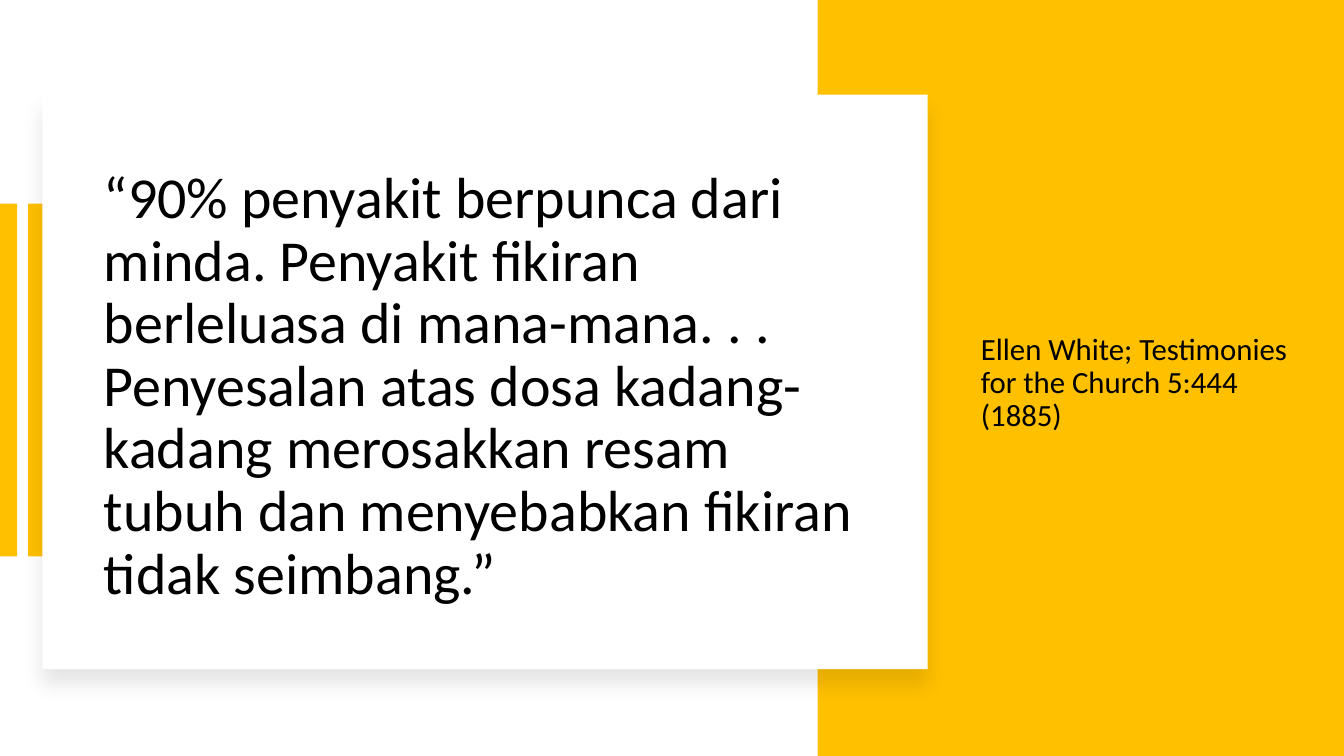
from dataclasses import dataclass

from lxml.etree import SubElement
from pptx import Presentation
from pptx.dml.color import RGBColor
from pptx.enum.shapes import MSO_SHAPE
from pptx.enum.text import MSO_ANCHOR, MSO_AUTO_SIZE, PP_ALIGN
from pptx.oxml.ns import qn
from pptx.shapes.autoshape import Shape
from pptx.slide import Slide
from pptx.util import Inches, Pt

AMBER = RGBColor(0xFF, 0xC0, 0x00)
WHITE = RGBColor(0xFF, 0xFF, 0xFF)
BLACK = RGBColor(0x00, 0x00, 0x00)
FONT = "Calibri"

QUOTE = (
    "“90% penyakit berpunca dari minda. Penyakit fikiran berleluasa di "
    "mana-mana. . . Penyesalan atas dosa kadang-kadang merosakkan resam "
    "tubuh dan menyebabkan fikiran tidak seimbang.”"
)
CITATION = "Ellen White; Testimonies for the Church 5:444 (1885)"


@dataclass
class Block:
    left: float
    top: float
    width: float
    height: float
    color: RGBColor


OUTER_BAR = Block(0, 2.02, 0.17, 3.5, AMBER)
INNER_BAR = Block(0.28, 2.02, 0.17, 3.5, AMBER)
SIDE_PANEL = Block(8.11, 0, 5.22, 7.5, AMBER)
QUOTE_CARD = Block(0.42, 0.94, 8.78, 5.7, WHITE)


def add_block(page: Slide, block: Block) -> Shape:
    shape = page.shapes.add_shape(
        MSO_SHAPE.RECTANGLE, Inches(block.left), Inches(block.top),
        Inches(block.width), Inches(block.height))
    shape.shadow.inherit = False
    shape.fill.solid()
    shape.fill.fore_color.rgb = block.color
    shape.line.fill.background()
    return shape


def add_soft_shadow(shape: Shape) -> None:
    effects = shape.element.spPr.find(qn("a:effectLst"))
    shadow = SubElement(
        effects, qn("a:outerShdw"), blurRad=str(Pt(15)), dist=str(Pt(11)),
        dir="5400000", algn="t", rotWithShape="0")
    color = SubElement(shadow, qn("a:srgbClr"), val=str(BLACK))
    SubElement(color, qn("a:alpha"), val="10000")


def write_text(box: Shape, text: str, size: float) -> None:
    frame = box.text_frame
    frame.text = text
    frame.word_wrap = True
    frame.auto_size = MSO_AUTO_SIZE.NONE
    frame.vertical_anchor = MSO_ANCHOR.MIDDLE
    para = frame.paragraphs[0]
    para.alignment = PP_ALIGN.LEFT
    para.line_spacing = 0.9
    para.font.name = FONT
    para.font.size = Pt(size)
    para.font.color.rgb = BLACK


def main() -> None:
    deck = Presentation()
    deck.slide_width = Inches(13.33)
    deck.slide_height = Inches(7.5)
    page = deck.slides.add_slide(deck.slide_layouts[5])

    # Amber accents and the white card
    for block in (OUTER_BAR, INNER_BAR, SIDE_PANEL):
        add_block(page, block)
    card = add_block(page, QUOTE_CARD)
    add_soft_shadow(card)

    # Quotation, in front of the card
    title = page.shapes.title
    title.left, title.top = Inches(0.93), Inches(1.65)
    title.width, title.height = Inches(7.77), Inches(4.39)
    write_text(title, QUOTE, 41.4)
    card.element.addnext(title.element)

    # Citation on the side panel
    citation = page.shapes.add_textbox(
        Inches(9.63), Inches(2.02), Inches(3.28), Inches(3.57))
    write_text(citation, CITATION, 22)

    deck.save("out.pptx")


if __name__ == "__main__":
    main()
